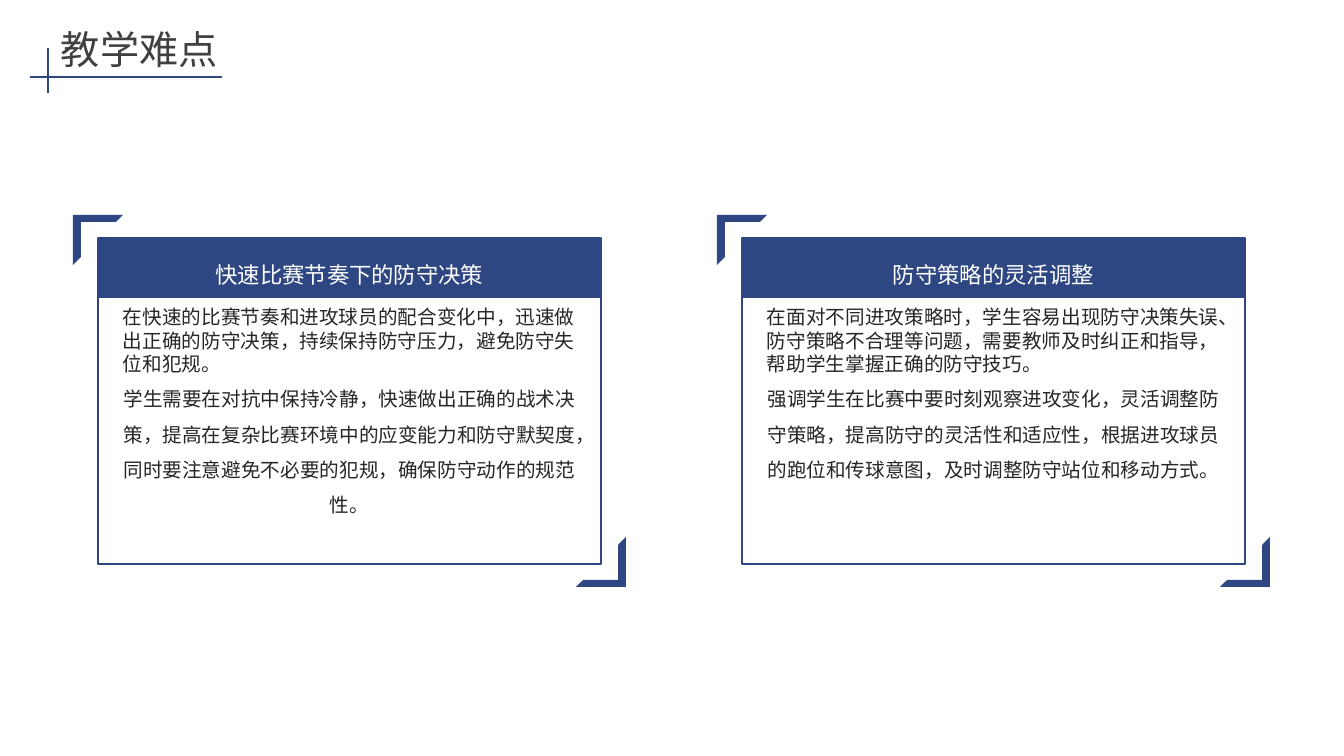
from lxml.etree import SubElement
from pptx import Presentation
from pptx.dml.color import RGBColor
from pptx.enum.shapes import MSO_CONNECTOR, MSO_SHAPE
from pptx.enum.text import MSO_ANCHOR, PP_ALIGN
from pptx.oxml.ns import qn
from pptx.util import Pt

TITLE = "教学难点"
CARDS = [
    (
        "快速比赛节奏下的防守决策",
        "在快速的比赛节奏和进攻球员的配合变化中，迅速做出正确的防守决策，持续保持防守压力，避免防守失位和犯规。",
        "学生需要在对抗中保持冷静，快速做出正确的战术决策，提高在复杂比赛环境中的应变能力和防守默契度，同时要注意避免不必要的犯规，确保防守动作的规范性。",
    ),
    (
        "防守策略的灵活调整",
        "在面对不同进攻策略时，学生容易出现防守决策失误、防守策略不合理等问题，需要教师及时纠正和指导，帮助学生掌握正确的防守技巧。",
        "强调学生在比赛中要时刻观察进攻变化，灵活调整防守策略，提高防守的灵活性和适应性，根据进攻球员的跑位和传球意图，及时调整防守站位和移动方式。",
    ),
]
COLORS = {"navy": "2E4782", "white": "FFFFFF", "body": "262626", "title": "404040"}
FONT = "Noto Sans CJK SC"

SLIDE_WIDTH, SLIDE_HEIGHT = 1344, 756
CARD_LEFT, CARD_TOP, CARD_WIDTH, CARD_HEIGHT = 98, 238, 503, 326
CARD_STEP = 644
HEADER_HEIGHT = 60
TEXT_INSET, TEXT_WIDTH = 25, 453
BODY_TOP, BODY_HEIGHT = 305, 233
CORNER_SIZE, CORNER_OFFSET_X, CORNER_OFFSET_Y = 50, 25, 23


def px(length):
    return round(length * 914400 / 100.8)


def color(name):
    return RGBColor.from_string(COLORS[name])


def add_block(slide, kind, left, top, width, height, fill, line=None):
    shape = slide.shapes.add_shape(kind, px(left), px(top), px(width), px(height))
    shape.shadow.inherit = False
    shape.fill.solid()
    shape.fill.fore_color.rgb = color(fill)
    if line:
        shape.line.color.rgb = color(line)
        shape.line.width = Pt(1)
    else:
        shape.line.fill.background()
    return shape


def add_corner(slide, left, top, rotation):
    corner = add_block(slide, MSO_SHAPE.HALF_FRAME, left, top, CORNER_SIZE, CORNER_SIZE, "navy")
    corner.adjustments[0] = 0.14
    corner.adjustments[1] = 0.16
    corner.rotation = rotation


def add_text(slide, left, top, width, height, paragraphs, size, ink, anchor):
    box = slide.shapes.add_textbox(px(left), px(top), px(width), px(height))
    frame = box.text_frame
    frame.word_wrap = True
    frame.vertical_anchor = anchor
    frame.margin_left = frame.margin_right = frame.margin_top = frame.margin_bottom = 0
    for index, (text, alignment, spacing) in enumerate(paragraphs):
        paragraph = frame.add_paragraph() if index else frame.paragraphs[0]
        paragraph.text = text
        paragraph.alignment = alignment
        paragraph.line_spacing = spacing
        paragraph.font.size = Pt(size)
        paragraph.font.color.rgb = color(ink)
        paragraph.font.name = FONT
        properties = paragraph._p.pPr.find(qn("a:defRPr"))
        SubElement(properties, qn("a:ea")).set("typeface", FONT)


def add_line(slide, x1, y1, x2, y2):
    line = slide.shapes.add_connector(MSO_CONNECTOR.STRAIGHT, px(x1), px(y1), px(x2), px(y2))
    line.line.color.rgb = color("navy")
    line.line.width = Pt(1)
    SubElement(line._element.spPr, qn("a:effectLst"))


def add_card(slide, left, heading, summary, detail):
    add_corner(slide, left - CORNER_OFFSET_X, CARD_TOP - CORNER_OFFSET_Y, 0)
    add_corner(
        slide,
        left + CARD_WIDTH + CORNER_OFFSET_X - CORNER_SIZE,
        CARD_TOP + CARD_HEIGHT + CORNER_OFFSET_Y - CORNER_SIZE,
        180,
    )
    add_block(slide, MSO_SHAPE.RECTANGLE, left, CARD_TOP, CARD_WIDTH, CARD_HEIGHT, "white", "navy")
    add_block(slide, MSO_SHAPE.RECTANGLE, left, CARD_TOP, CARD_WIDTH, HEADER_HEIGHT, "navy")
    text_left = left + TEXT_INSET
    add_text(slide, text_left, BODY_TOP, TEXT_WIDTH, BODY_HEIGHT,
             [(summary, PP_ALIGN.LEFT, 1.0), (detail, PP_ALIGN.CENTER, 1.5)],
             14, "body", MSO_ANCHOR.TOP)
    add_text(slide, text_left, CARD_TOP, TEXT_WIDTH, HEADER_HEIGHT,
             [(heading, PP_ALIGN.CENTER, 1.5)], 16, "white", MSO_ANCHOR.MIDDLE)


def main():
    presentation = Presentation()
    presentation.slide_width = px(SLIDE_WIDTH)
    presentation.slide_height = px(SLIDE_HEIGHT)
    slide = presentation.slides.add_slide(presentation.slide_layouts[6])
    for index, card in enumerate(CARDS):
        add_card(slide, CARD_LEFT + index * CARD_STEP, *card)
    add_line(slide, 30, 77, 222, 77)
    add_text(slide, 61, 21, 1236, 47, [(TITLE, PP_ALIGN.LEFT, 1.2)],
             28, "title", MSO_ANCHOR.MIDDLE)
    add_line(slide, 48, 93, 48, 48)
    presentation.save("out.pptx")


if __name__ == "__main__":
    main()
